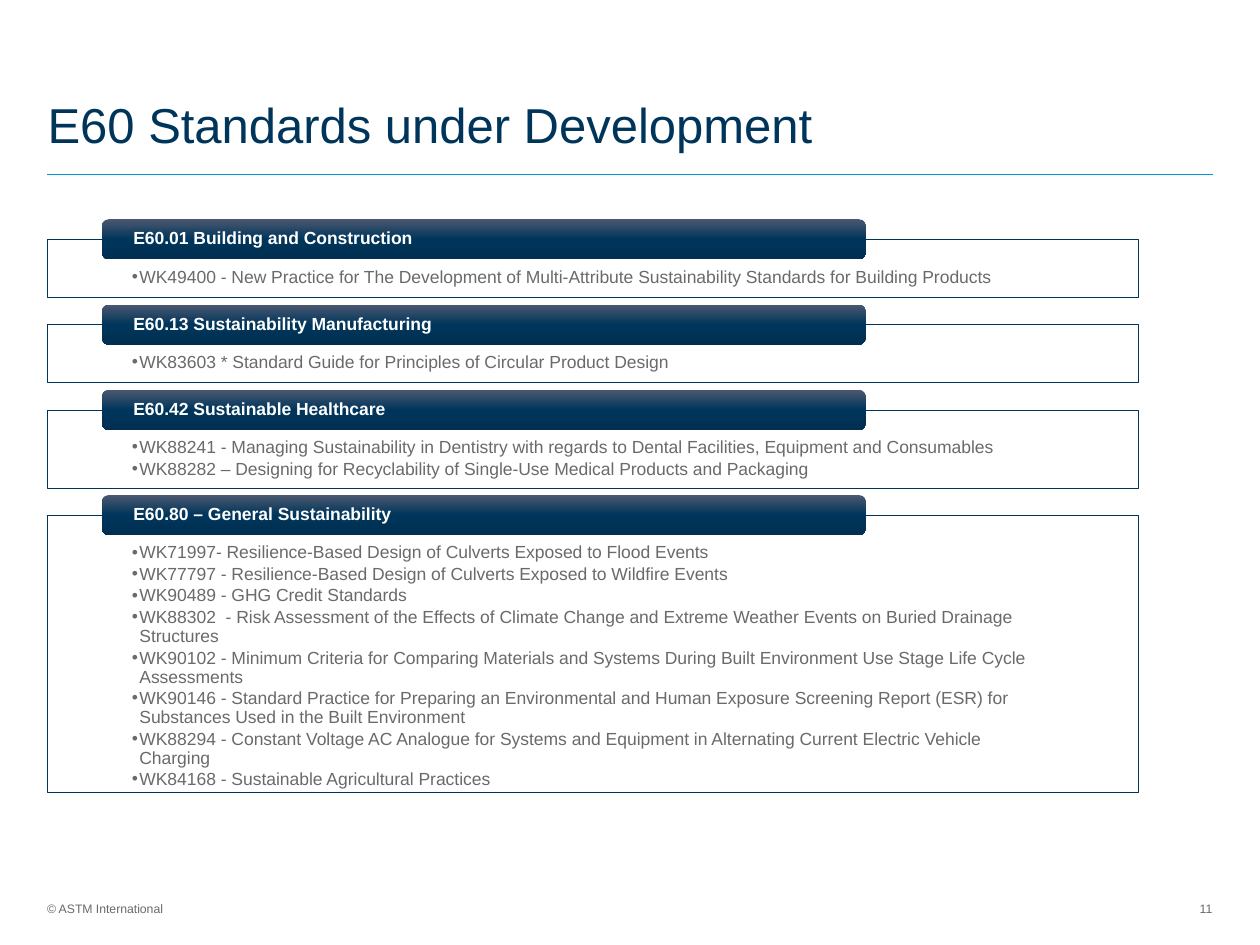
from dataclasses import dataclass

from lxml.etree import SubElement
from pptx import Presentation
from pptx.dml.color import RGBColor
from pptx.enum.shapes import MSO_CONNECTOR, MSO_SHAPE
from pptx.enum.text import MSO_ANCHOR, MSO_AUTO_SIZE, PP_ALIGN
from pptx.oxml import parse_xml
from pptx.oxml.ns import nsdecls, qn
from pptx.util import Cm, Pt

COLORS = {
    "navy": "00355B",
    "slate": "4B5870",
    "deep": "002F51",
    "rule": "0095D6",
    "gray": "6A6A6A",
    "white": "FFFFFF",
}
FONT = "Arial"
LEFT, FIRST_TOP, PANEL_W, GAP = 0.96, 4.83, 22.0, 0.55
COMPARISON_LAYOUT = 4  # a title and four body placeholders


@dataclass
class Section:
    heading: str
    items: list[str]
    height: float


SECTIONS = [
    Section("E60.01 Building and Construction", [
        "WK49400 - New Practice for The Development of Multi-Attribute Sustainability Standards for Building Products",
    ], 1.17),
    Section("E60.13 Sustainability Manufacturing", [
        "WK83603 * Standard Guide for Principles of Circular Product Design",
    ], 1.17),
    Section("E60.42 Sustainable Healthcare", [
        "WK88241 - Managing Sustainability in Dentistry with regards to Dental Facilities, Equipment and Consumables",
        "WK88282 – Designing for Recyclability of Single-Use Medical Products and Packaging",
    ], 1.57),
    Section("E60.80 – General Sustainability", [
        "WK71997- Resilience-Based Design of Culverts Exposed to Flood Events",
        "WK77797 - Resilience-Based Design of Culverts Exposed to Wildfire Events",
        "WK90489 - GHG Credit Standards",
        "WK88302  - Risk Assessment of the Effects of Climate Change and Extreme Weather Events on Buried Drainage Structures",
        "WK90102 - Minimum Criteria for Comparing Materials and Systems During Built Environment Use Stage Life Cycle Assessments",
        "WK90146 - Standard Practice for Preparing an Environmental and Human Exposure Screening Report (ESR) for Substances Used in the Built Environment",
        "WK88294 - Constant Voltage AC Analogue for Systems and Equipment in Alternating Current Electric Vehicle Charging",
        "WK84168 - Sustainable Agricultural Practices",
    ], 5.59),
]


def rgb(name: str) -> RGBColor:
    return RGBColor.from_string(COLORS[name])


def place(sp, left: float, top: float, width: float, height: float) -> None:
    sp.left, sp.top, sp.width, sp.height = Cm(left), Cm(top), Cm(width), Cm(height)


def setup_frame(sp, anchor=MSO_ANCHOR.TOP, left=0.0, top=0.0, right=0.0, bottom=0.0):
    tf = sp.text_frame
    tf.word_wrap = True
    tf.auto_size = MSO_AUTO_SIZE.NONE
    tf.vertical_anchor = anchor
    tf.margin_left, tf.margin_top = Cm(left), Cm(top)
    tf.margin_right, tf.margin_bottom = Cm(right), Cm(bottom)
    return tf


def add_run(p, text: str, size: float, color: str, bold: bool = False) -> None:
    r = p.add_run()
    r.text = text
    r.font.name, r.font.size, r.font.bold = FONT, Pt(size), bold
    r.font.color.rgb = rgb(color)


def add_label(s, text: str, left: float, top: float, width: float, align) -> None:
    sp = s.shapes.add_textbox(Cm(left), Cm(top), Cm(width), Cm(0.32))
    p = setup_frame(sp, MSO_ANCHOR.MIDDLE).paragraphs[0]
    p.alignment = align
    add_run(p, text, 7, "gray")


def fill_panel(sp, section: Section, top: float) -> None:
    place(sp, LEFT, top, PANEL_W, section.height)
    sp.fill.solid()
    sp.fill.fore_color.rgb = rgb("white")
    color = sp.fill._xPr.find(qn("a:solidFill"))[0]
    SubElement(color, qn("a:alpha"), val="90000")
    sp.line.color.rgb = rgb("navy")
    sp.line.width = Pt(0.5)

    tf = setup_frame(sp, left=1.7, top=0.57, right=1.7, bottom=0.2)
    for i, item in enumerate(section.items):
        p = tf.add_paragraph() if i else tf.paragraphs[0]
        p.level = 1
        pPr = p._p.get_or_add_pPr()
        pPr.set("marL", str(Cm(0.15)))
        pPr.set("indent", str(-Cm(0.15)))
        SubElement(pPr, qn("a:buChar"), char="•")
        p.alignment = PP_ALIGN.LEFT
        p.line_spacing = 0.9
        p.space_before, p.space_after = Pt(0), Pt(1.5)
        add_run(p, item, 10, "gray")


def add_badge(s, heading: str, panel_top: float) -> None:
    sp = s.shapes.add_shape(MSO_SHAPE.ROUNDED_RECTANGLE, Cm(2.06),
                            Cm(panel_top - 0.41), Cm(15.39), Cm(0.81))
    sp.shadow.inherit = False
    sp.line.fill.background()
    stops = "".join(
        f'<a:gs pos="{pos}"><a:srgbClr val="{COLORS[name]}"/></a:gs>'
        for pos, name in ((0, "slate"), (50000, "navy"), (100000, "deep")))
    sp._element.spPr.find(qn("a:prstGeom")).addnext(parse_xml(
        f'<a:gradFill {nsdecls("a")} rotWithShape="1"><a:gsLst>{stops}</a:gsLst>'
        '<a:lin ang="5400000" scaled="0"/></a:gradFill>'))
    p = setup_frame(sp, MSO_ANCHOR.MIDDLE, left=0.59, right=0.59).paragraphs[0]
    p.alignment = PP_ALIGN.LEFT
    p.line_spacing = 0.9
    add_run(p, heading, 10, "white", bold=True)


def main() -> None:
    prs = Presentation()
    prs.slide_width, prs.slide_height = Cm(25.4), Cm(19.05)
    s = prs.slides.add_slide(prs.slide_layouts[COMPARISON_LAYOUT])

    # Title
    title = s.shapes.title
    place(title, LEFT, 2.03, 19.58, 1.24)
    p = setup_frame(title).paragraphs[0]
    p.alignment = PP_ALIGN.LEFT
    p.line_spacing = Pt(30)
    add_run(p, "E60 Standards under Development", 28, "navy")

    # Rule under the title
    rule = s.shapes.add_connector(MSO_CONNECTOR.STRAIGHT, Cm(0.95), Cm(3.52),
                                  Cm(24.45), Cm(3.52))
    rule.line.color.rgb = rgb("rule")
    rule.line.width = Pt(0.5)
    SubElement(rule._element.spPr, qn("a:effectLst"))

    # Stacked panels, each with a heading badge over its top edge
    bodies = [sp for sp in s.placeholders if 1 <= sp.placeholder_format.idx <= 4]
    top = FIRST_TOP
    for sp, section in zip(bodies, SECTIONS):
        fill_panel(sp, section, top)
        add_badge(s, section.heading, top)
        top += section.height + GAP

    # Footer
    add_label(s, "© ASTM International", 0.95, 18.15, 4, PP_ALIGN.LEFT)
    add_label(s, "11", 23.2, 18.16, 1.24, PP_ALIGN.RIGHT)

    prs.save("out.pptx")


if __name__ == "__main__":
    main()
